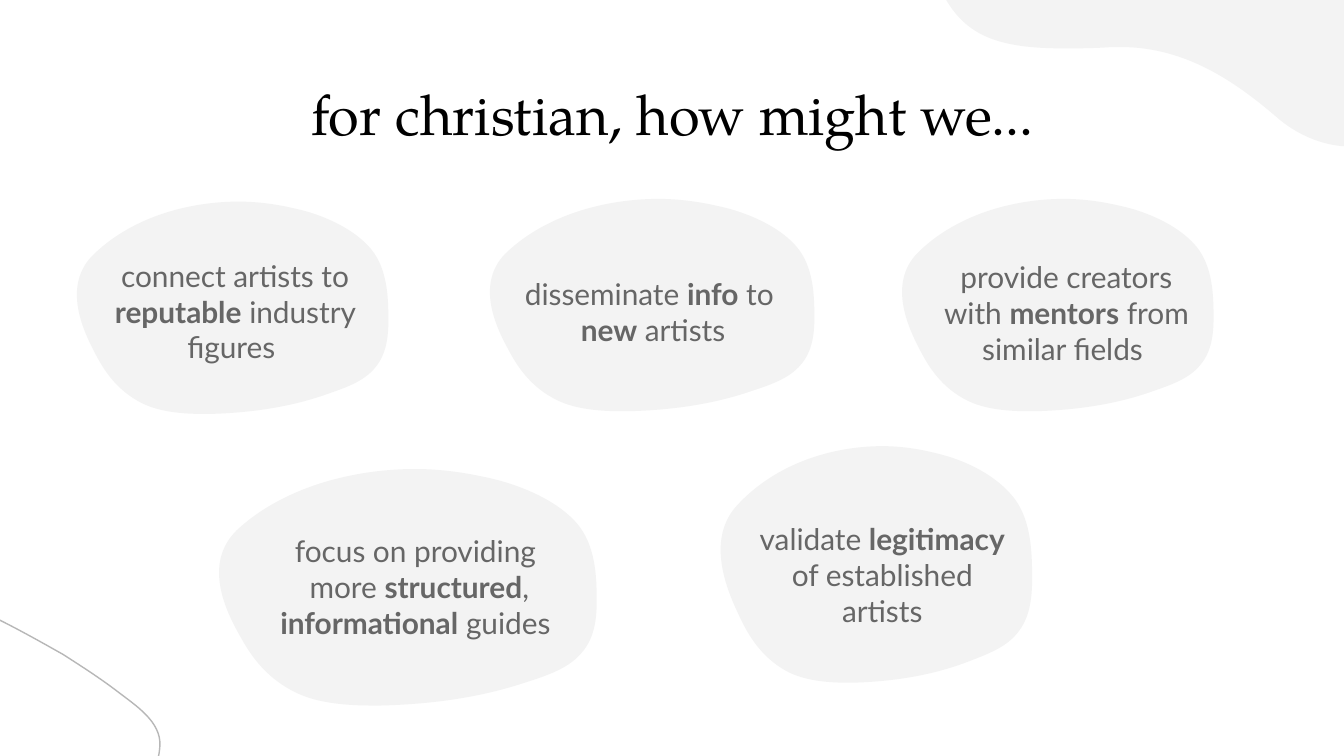
from lxml import etree
from pptx import Presentation
from pptx import util as u
from pptx.dml.color import RGBColor
from pptx.enum import text
from pptx.oxml.ns import qn

# The slide is 16:9 and ten square grid cells wide
CELL = u.Inches(1)
COLS = 10
ROWS = COLS * 9 / 16
PALE, GREY, INK, BLACK = "F3F3F3", "B7B7B7", "666666", "000000"

# Curves: a start point, then three points for each cubic segment
PEBBLE = [  # in hundredths of the pebble's width and height
    (53.6, 0), (48, 0), (42, 1), (36.4, 3), (25, 7), (15, 15), (7.9, 26),
    (0, 39), (4.1, 57), (8.6, 70), (11.7, 79.5), (15.8, 89), (23.7, 95),
    (29, 99), (36, 100), (42.6, 100), (43.3, 100), (44, 100), (44.7, 100),
    (57, 99.5), (69, 97), (80.4, 91), (86, 88), (92.4, 85), (96, 78),
    (99.3, 72), (100, 64), (100, 56), (100, 45), (99.7, 32), (94.8, 22.7),
    (90.4, 14.5), (83, 8.5), (75.2, 4.9), (73.6, 4.2), (72, 3.6), (70.2, 3),
    (64.8, 1.1), (59, 0), (53.6, 0)]
CORNER_WAVE = [  # in cells; the last three points run straight up the edge
    (7.04, 0), (7.2, 0.27), (7.44, 0.36), (7.91, 0.36),
    (8.02, 0.36), (8.14, 0.36), (8.27, 0.35), (8.29, 0.35), (8.32, 0.35), (8.34, 0.35),
    (8.84, 0.35), (9.22, 0.63), (9.52, 0.89), (9.68, 1.02), (9.87, 1.09), (10.05, 1.09),
    (10.27, 1.09), (10.48, 0.99), (10.62, 0.8), (10.62, 0.5), (10.62, 0.3), (10.62, 0)]
CORNER_LOOP = [  # in cells
    (0.47, 4.87), (0.31, 4.78), (0.15, 4.69), (-0.01, 4.61),
    (-0.33, 4.43), (-0.91, 4.06), (-1.31, 4.25), (-1.58, 4.38), (-1.75, 4.78), (-1.89, 5.03),
    (-1.9, 5.28), (-2.03, 5.65), (-1.89, 5.88), (-1.84, 5.96), (-1.77, 6.02), (-1.69, 6.07),
    (-1.49, 6.19), (-1.23, 6.21), (-1.02, 6.21), (-0.6, 6.21), (-0.16, 6.21), (0.25, 6.13),
    (0.47, 6.08), (0.8, 6.06), (0.99, 5.94), (1.12, 5.86), (1.18, 5.69), (1.19, 5.55),
    (1.2, 5.37), (1.01, 5.25), (0.88, 5.15), (0.75, 5.05), (0.61, 4.96), (0.47, 4.87)]

# Pebble box, text box, paragraphs (bold words between asterisks)
IDEAS = [
    ((0.49, 1.5, 2.4, 1.58), (0.5, 1.87, 2.5, 0.89),
     ["connect artists to *reputable* industry figures "]),
    ((3.56, 1.48, 2.5, 1.58), (3.61, 1.87, 2.5, 0.89),
     ["disseminate *info* to ", "*new* artists"]),
    ((6.63, 1.48, 2.4, 1.58), (6.88, 1.88, 2.11, 0.89),
     ["provide creators with *mentors* from similar fields "]),
    ((5.28, 3.32, 2.4, 1.76), (5.51, 3.83, 2.11, 0.89),
     ["validate *legitimacy* of established artists"]),
    ((1.53, 3.49, 2.91, 1.76), (1.87, 3.92, 2.5, 0.89),
     ["focus on providing ", "more *structured*, *informational* guides "]),
]


def cells(*lengths):
    return [round(n * CELL) for n in lengths]


def color(value):
    return RGBColor.from_string(value)


def style_run(r, font, size, fill):
    r.font.name, r.font.size = font, u.Pt(size)
    r.font.color.rgb = color(fill)


def add_curve(s, points, fill=None, line=None):
    """Draw a closed outline whose points are cubic segments."""
    start, *rest = [cells(x, y) for x, y in points]
    builder = s.shapes.build_freeform(*start)
    builder.add_line_segments(rest, close=True)
    sp = builder.convert_to_shape()
    sp.shadow.inherit = False
    # Join every three straight segments into one curve
    lines = list(sp.element.iter(qn("a:lnTo")))
    for i in range(0, len(rest), 3):
        curve = etree.Element(qn("a:cubicBezTo"))
        lines[i].addprevious(curve)
        for segment in lines[i:i + 3]:
            curve.append(segment[0])
            segment.getparent().remove(segment)
    if fill:
        sp.fill.solid()
        sp.fill.fore_color.rgb = color(fill)
    else:
        sp.fill.background()
    if line:
        sp.line.color.rgb = color(line)
        sp.line.width = u.Pt(0.75)
    else:
        sp.line.fill.background()


def add_pebble(s, left, top, width, height):
    points = [(left + x * width / 100, top + y * height / 100) for x, y in PEBBLE]
    add_curve(s, points, fill=PALE)


def add_idea_text(s, box, paragraphs):
    tf = s.shapes.add_textbox(*cells(*box)).text_frame
    tf.word_wrap = True
    tf.vertical_anchor = text.MSO_ANCHOR.MIDDLE
    tf.margin_left = tf.margin_right = tf.margin_top = tf.margin_bottom = u.Inches(0.1)
    for i, content in enumerate(paragraphs):
        p = tf.add_paragraph() if i else tf.paragraphs[0]
        p.alignment = text.PP_ALIGN.CENTER
        for j, part in enumerate(content.split("*")):
            if part:
                r = p.add_run()
                r.text = part
                style_run(r, "Lato", 16, INK)
                r.font.bold = j % 2 == 1


def set_title(s, content):
    title = s.shapes.title
    title.left, title.top, title.width, title.height = cells(0.79, 0.59, 8.43, 0.63)
    tf = title.text_frame
    tf.text = content
    tf.auto_size = text.MSO_AUTO_SIZE.NONE
    tf.vertical_anchor = text.MSO_ANCHOR.TOP
    tf.margin_left = tf.margin_right = tf.margin_top = tf.margin_bottom = 0
    p = tf.paragraphs[0]
    p.alignment = text.PP_ALIGN.CENTER
    style_run(p.runs[0], "TeX Gyre Pagella", 30, BLACK)


def main():
    prs = Presentation()
    prs.slide_width, prs.slide_height = cells(COLS, ROWS)
    s = prs.slides.add_slide(prs.slide_layouts[5])

    # Corner decoration and title
    add_curve(s, CORNER_WAVE, fill=PALE)
    add_curve(s, CORNER_LOOP, line=GREY)
    set_title(s, "for christian, how might we...")

    # Pebbles, then the ideas on them
    for pebble, _, _ in IDEAS:
        add_pebble(s, *pebble)
    for _, box, paragraphs in IDEAS:
        add_idea_text(s, box, paragraphs)

    prs.save("out.pptx")


if __name__ == "__main__":
    main()
